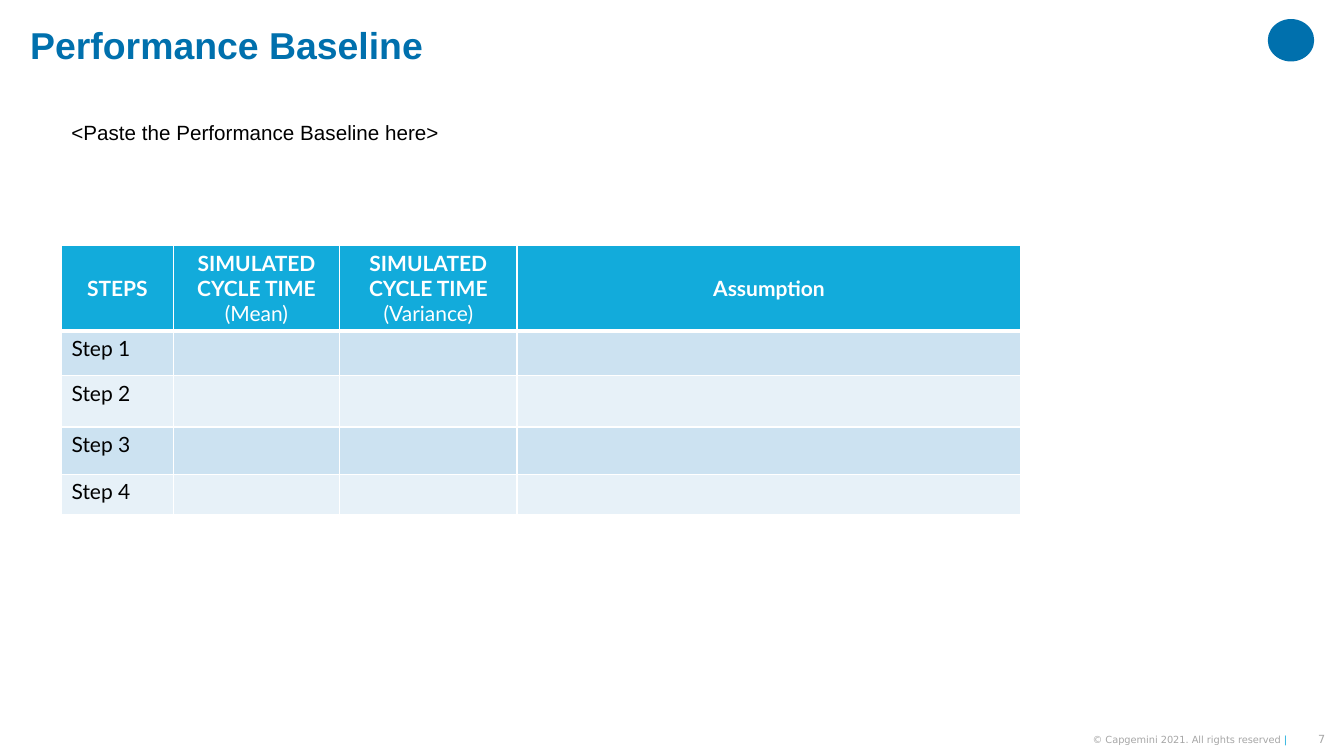
"""Build the Performance Baseline slide with its table of simulated cycle times."""
from lxml import etree
from pptx import Presentation
from pptx import util as u
from pptx.dml.color import RGBColor
from pptx.enum import shapes, text
from pptx.oxml.ns import qn

COLORS = {"blue": "0070AD", "cyan": "12ABDB", "black": "000000", "white": "FFFFFF",
          "grey": "A6A6A6", "band_dark": "CCE2F1", "band_light": "E7F1F8"}


def style(font, name, size, color, bold=False):
    font.name, font.size, font.bold = name, u.Pt(size), bold
    font.color.rgb = RGBColor.from_string(COLORS[color])


def add_text(s, box, content, name, size, color, bold=False):
    sp = s.shapes.add_textbox(*[u.Cm(v) for v in box])
    tf = sp.text_frame
    tf.word_wrap = True
    p = tf.paragraphs[0]
    p.add_run().text = content
    style(p.font, name, size, color, bold)
    return tf, p


prs = Presentation()
prs.slide_width, prs.slide_height = u.Cm(33.87), u.Cm(19.05)
s = prs.slides.add_slide(prs.slide_layouts[6])

emblem = s.shapes.add_shape(shapes.MSO_SHAPE.OVAL, u.Cm(31.95), u.Cm(0.48), u.Cm(1.17), u.Cm(1.07))
emblem.shadow.inherit = False
emblem.fill.solid()
emblem.fill.fore_color.rgb = RGBColor.from_string(COLORS["blue"])
emblem.line.fill.background()

tf, p = add_text(s, (0.51, 0.56, 31.22, 1.24), "Performance Baseline", "Arial", 26.7, "blue", True)
p.line_spacing = 0.9
add_text(s, (1.55, 2.9, 16.94, 0.89), "<Paste the Performance Baseline here>", "Arial", 14.7, "black")

footers = [((32.64, 18.47, 0.76, 0.33), "7", 8),
           ((25.04, 18.47, 7.4, 0.33), "© Capgemini 2021. All rights reserved ", 7)]
for box, content, size in footers:
    tf, p = add_text(s, box, content, "DejaVu Sans", size, "grey")
    tf.margin_left = tf.margin_right = tf.margin_top = tf.margin_bottom = 0
    tf.vertical_anchor = text.MSO_ANCHOR.MIDDLE
    p.alignment = text.PP_ALIGN.RIGHT
r = p.add_run()
r.text = "|"
r.font.color.rgb = RGBColor.from_string(COLORS["cyan"])

headers = [("STEPS", ""), ("SIMULATED CYCLE TIME ", "(Mean)"),
           ("SIMULATED CYCLE TIME ", "(Variance)"), ("Assumption", "")]
widths = [2.82, 4.19, 4.47, 12.7]
heights = [2.13, 1.12, 1.3, 1.19, 1.02]
table = s.shapes.add_table(len(heights), len(widths), u.Cm(1.55), u.Cm(6.18),
                           u.Cm(sum(widths)), u.Cm(sum(heights))).table
for column, width in zip(table.columns, widths):
    column.width = u.Cm(width)

for i, height in enumerate(heights):
    table.rows[i].height = u.Cm(height)
    for j, (label, detail) in enumerate(headers):
        cell = table.cell(i, j)
        p = cell.text_frame.paragraphs[0]
        if i == 0:
            fill = "cyan"
            cell.vertical_anchor = text.MSO_ANCHOR.MIDDLE
            p.alignment = text.PP_ALIGN.CENTER
            p.add_run().text = label
            if detail:
                r = p.add_run()
                r.text = detail
                r.font.bold = False
        else:
            fill = "band_dark" if i % 2 else "band_light"
            if j == 0:
                p.add_run().text = f"Step {i}"
        style(p.font, "Lato", 15, "black" if i else "white", i == 0)
        for side in "LRTB":
            thick = (i, side) in [(0, "B"), (1, "T")]
            ln = etree.SubElement(cell._tc.get_or_add_tcPr(), qn(f"a:ln{side}"),
                                  w=str(u.Pt(3 if thick else 1)))
            solid = etree.SubElement(ln, qn("a:solidFill"))
            etree.SubElement(solid, qn("a:srgbClr"), val=COLORS["white"])
        cell.fill.solid()
        cell.fill.fore_color.rgb = RGBColor.from_string(COLORS[fill])

prs.save("out.pptx")
